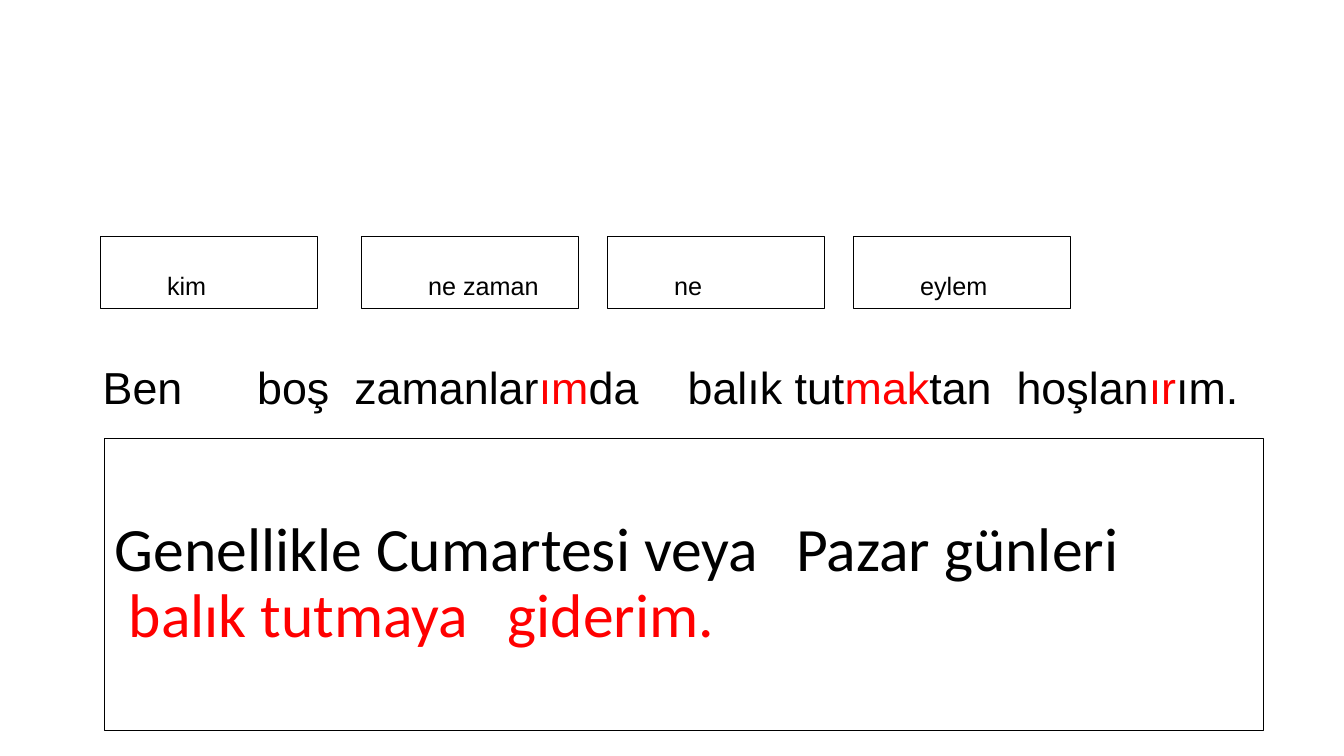
from pptx import Presentation
from pptx.dml.color import RGBColor
from pptx.enum.shapes import MSO_SHAPE
from pptx.enum.text import MSO_ANCHOR, MSO_AUTO_SIZE, PP_ALIGN
from pptx.oxml.ns import qn
from pptx.util import Cm, Pt
from lxml.etree import SubElement

BLACK = RGBColor(0, 0, 0)
RED = RGBColor(255, 0, 0)


def write(frame, lines, font="Arial", size=18, space=1.0, anchor=MSO_ANCHOR.TOP):
    frame.word_wrap = True
    frame.auto_size = MSO_AUTO_SIZE.NONE
    frame.vertical_anchor = anchor
    for pos, (parts, stops) in enumerate(lines):
        para = frame.add_paragraph() if pos else frame.paragraphs[0]
        para.alignment = PP_ALIGN.LEFT
        para.line_spacing = space
        if stops:
            tabs = SubElement(para._p.get_or_add_pPr(), qn("a:tabLst"))
            for stop in stops:
                SubElement(tabs, qn("a:tab"), pos=str(Cm(stop)), algn="l")
        for text, color in parts:
            run = para.add_run()
            run.text = text
            run.font.name = font
            run.font.size = Pt(size)
            run.font.color.rgb = color


class Page:
    def __init__(self, slide, line=0.75):
        self.slide = slide
        self.line = line

    def frame(self, shape):
        shape.fill.background()
        shape.line.color.rgb = BLACK
        shape.line.width = Pt(self.line)

    def label(self, text, left):
        box = self.slide.shapes.add_shape(
            MSO_SHAPE.RECTANGLE, Cm(left), Cm(5.97), Cm(5.46), Cm(1.8))
        box.shadow.inherit = False
        self.frame(box)
        box.text_frame.margin_left = Cm(1.67)
        box.text_frame.margin_bottom = Cm(0.2)
        write(box.text_frame, [([(text, BLACK)], [])], anchor=MSO_ANCHOR.BOTTOM)

    def phrase(self, parts, stops):
        box = self.slide.shapes.add_textbox(Cm(2.34), Cm(8.94), Cm(29.51), Cm(1.63))
        write(box.text_frame, [(parts, stops)], size=32)

    def title(self, lines):
        box = self.slide.shapes.title
        box.left, box.top, box.width, box.height = Cm(2.64), Cm(11.05), Cm(29.21), Cm(7.37)
        self.frame(box)
        write(box.text_frame, lines, font="Calibri", size=44, space=0.9,
              anchor=MSO_ANCHOR.MIDDLE)


def main():
    deck = Presentation()
    deck.slide_width, deck.slide_height = Cm(33.87), Cm(19.05)
    page = Page(deck.slides.add_slide(deck.slide_layouts[5]))

    page.label("kim", 2.54)
    for pos, text in enumerate(["ne zaman", "ne", "eylem"]):
        page.label(text, 9.12 + 6.2 * pos)

    page.phrase([
        ("Ben\tboş\tzamanlar", BLACK), ("ım", RED),
        ("da\tbalık tut", BLACK), ("mak", RED),
        ("tan\thoşlan", BLACK), ("ır", RED), ("ım.", BLACK),
    ], [3.89, 6.34, 14.74, 23.03])

    page.title([
        ([("Genellikle Cumartesi veya\tPazar günleri", BLACK)], [17.17]),
        ([(" balık tutmaya\tgiderim.", RED)], [9.9]),
    ])
    deck.save("out.pptx")


if __name__ == "__main__":
    main()
